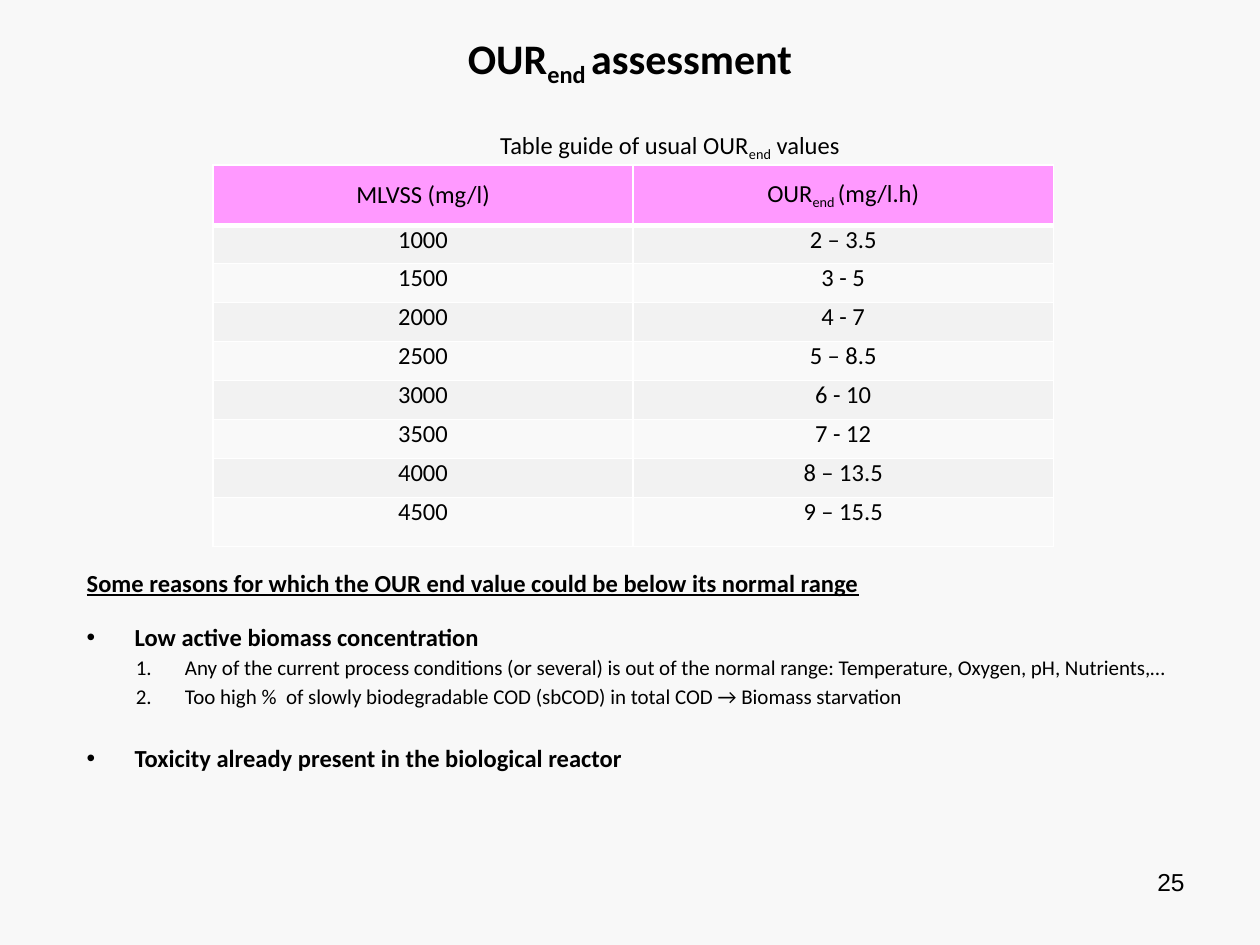
from lxml.etree import SubElement
from pptx import Presentation
from pptx.dml.color import RGBColor
from pptx.enum.text import MSO_ANCHOR as Anchor, PP_ALIGN as Align
from pptx.oxml.ns import qn
from pptx.util import Inches, Pt

BACKGROUND = RGBColor(0xF8, 0xF8, 0xF8)
BLACK = RGBColor(0x00, 0x00, 0x00)
PINK = RGBColor(0xFF, 0x99, 0xFF)
GREY = RGBColor(0xF2, 0xF2, 0xF2)
PALE = RGBColor(0xF9, 0xF9, 0xF9)
WHITE = RGBColor(0xFF, 0xFF, 0xFF)

BODY = {"name": "Calibri", "size": Pt(14)}
BOLD = {**BODY, "bold": True}
HEADING = {**BOLD, "underline": True}
TITLE = {**BOLD, "size": Pt(24)}
DETAIL = {**BODY, "size": Pt(12)}
NUMBER = {"name": "Arial", "size": Pt(14)}

OUR_END = ["OUR", ("end ",)]
VALUES = [
    ("1000", "2 – 3.5"),
    ("1500", "3 - 5"),
    ("2000", "4 - 7"),
    ("2500", "5 – 8.5"),
    ("3000", "6 - 10"),
    ("3500", "7 - 12"),
    ("4000", "8 – 13.5"),
    ("4500", "9 – 15.5"),
]
REASONS = [
    ("Some reasons for which the OUR end value could be below its normal range",
     HEADING, None, 0),
    ("Low active biomass concentration", BOLD, "bullet", 14),
    ("Any of the current process conditions (or several) is out of the normal range: "
     "Temperature, Oxygen, pH, Nutrients,…", DETAIL, "number", 2),
    ("Too high %  of slowly biodegradable COD (sbCOD) in total COD → Biomass starvation",
     DETAIL, "number", 2),
    ("Toxicity already present in the biological reactor", BOLD, "bullet", 19.5),
]


def write(para, spans, style, align=Align.LEFT):
    para.alignment = align
    for content in spans:
        lowered = isinstance(content, tuple)
        span = para.add_run()
        span.text = content[0] if lowered else content
        for name, value in style.items():
            setattr(span.font, name, value)
        span.font.color.rgb = BLACK
        if lowered:
            span._r.get_or_add_rPr().set("baseline", "-20000")


def add_box(page, left, top, width, height):
    box = page.shapes.add_textbox(Inches(left), Inches(top), Inches(width), Inches(height))
    box.text_frame.word_wrap = True
    return box.text_frame


def set_marker(para, marker):
    margin, hanging = (0.38, 0.38) if marker == "bullet" else (0.78, 0.39)
    properties = para._p.get_or_add_pPr()
    properties.set("marL", str(Inches(margin)))
    properties.set("indent", str(-Inches(hanging)))
    if marker == "bullet":
        SubElement(properties, qn("a:buFont"), typeface="Arial")
        SubElement(properties, qn("a:buChar"), char="•")
    else:
        SubElement(properties, qn("a:buFont"), typeface="Calibri")
        SubElement(properties, qn("a:buAutoNum"), type="arabicPeriod")


def set_borders(cell, widths):
    properties = cell._tc.get_or_add_tcPr()
    for side, width in widths.items():
        line = SubElement(properties, qn(f"a:ln{side}"), w=str(Pt(width)))
        fill = SubElement(line, qn("a:solidFill"))
        SubElement(fill, qn("a:srgbClr"), val=str(WHITE))


def fill_cell(cell, spans, row):
    margins = {"margin_left": 0.07, "margin_right": 0.07, "margin_top": 0, "margin_bottom": 0}
    for name, value in margins.items():
        setattr(cell, name, Inches(value))
    cell.vertical_anchor = Anchor.TOP if row else Anchor.MIDDLE
    set_borders(cell, {"L": 1, "R": 1, "T": 3 if row == 1 else 1, "B": 1 if row else 3})
    cell.fill.solid()
    cell.fill.fore_color.rgb = (GREY if row % 2 else PALE) if row else PINK
    write(cell.text_frame.paragraphs[0], spans, BODY, Align.CENTER)


def add_values_table(page):
    heights = [0.48, 0.3] + [0.31] * 6 + [0.39]
    frame = page.shapes.add_table(len(heights), 2, Inches(1.69), Inches(1.31),
                                  Inches(6.67), Inches(sum(heights)))
    table = frame.table
    for row, height in enumerate(heights):
        table.rows[row].height = Inches(height)
    header = (["MLVSS (mg/l)"], OUR_END + ["(mg/l.h)"])
    rows = [header] + [([solids], [rate]) for solids, rate in VALUES]
    for row, contents in enumerate(rows):
        for column, spans in enumerate(contents):
            fill_cell(table.cell(row, column), spans, row)


def add_reasons(page):
    frame = add_box(page, 0.59, 4.46, 8.9, 2.03)
    for index, (text, style, marker, gap) in enumerate(REASONS):
        para = frame.add_paragraph() if index else frame.paragraphs[0]
        write(para, [text], style)
        para.space_before = Pt(gap)
        if marker:
            set_marker(para, marker)


def main():
    deck = Presentation()
    deck.slide_width, deck.slide_height = Inches(10), Inches(7.5)
    page = deck.slides.add_slide(deck.slide_layouts[6])
    page.background.fill.solid()
    page.background.fill.fore_color.rgb = BACKGROUND

    number = add_box(page, 7.17, 6.83, 2.33, 0.52)
    write(number.paragraphs[0], ["25"], NUMBER, Align.RIGHT)
    title = add_box(page, 0.51, 0.21, 8.98, 0.51)
    write(title.paragraphs[0], OUR_END + ["assessment"], TITLE, Align.CENTER)
    caption = add_box(page, 3.03, 0.99, 4.02, 0.34)
    caption.margin_left = Inches(0.94)
    caption.vertical_anchor = Anchor.MIDDLE
    write(caption.paragraphs[0], ["Table guide of usual OUR", ("end",), " values"], BODY)
    add_reasons(page)
    add_values_table(page)
    deck.save("out.pptx")


if __name__ == "__main__":
    main()
